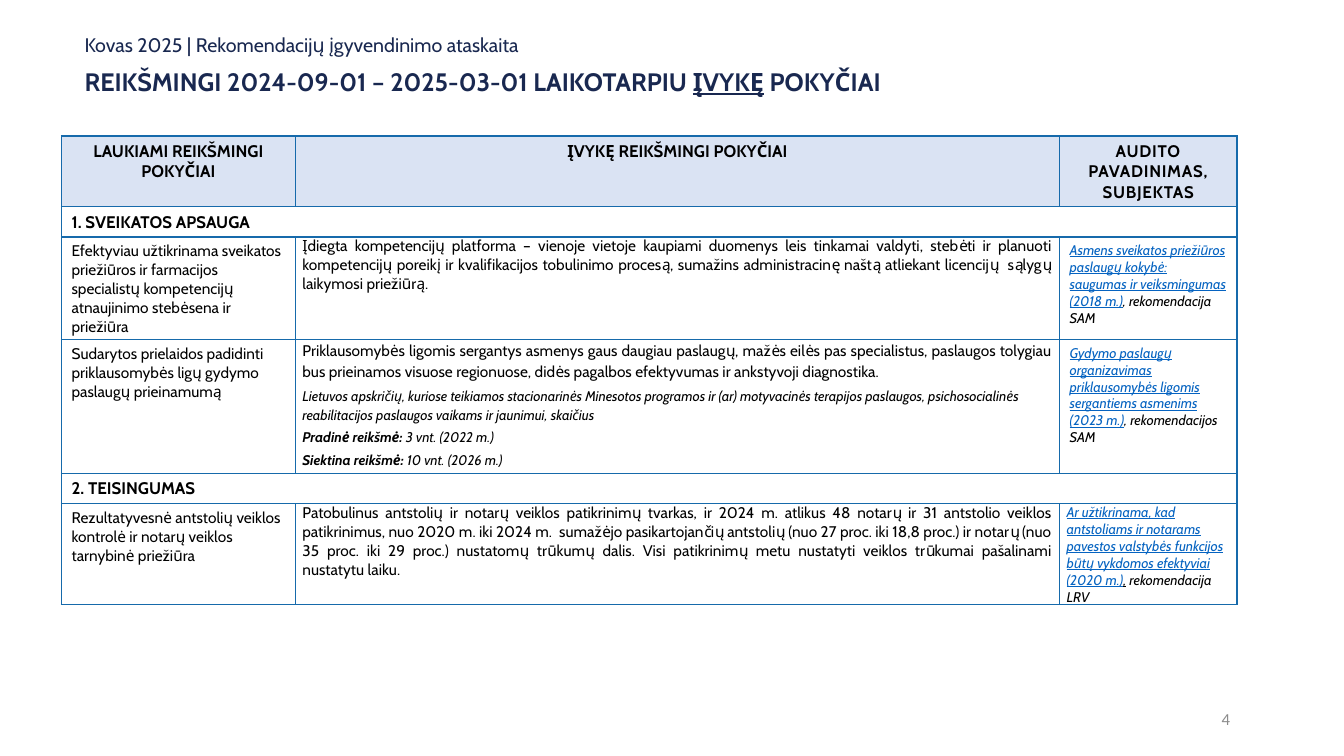
from dataclasses import dataclass
from typing import Optional

import lxml.etree
import pptx
import pptx.dml.color
import pptx.enum.text
import pptx.oxml.ns
import pptx.util

Inches = pptx.util.Inches
Pt = pptx.util.Pt
RGBColor = pptx.dml.color.RGBColor
ALIGN = pptx.enum.text.PP_ALIGN
ANCHOR = pptx.enum.text.MSO_ANCHOR

NAVY = RGBColor(0x19, 0x28, 0x50)
BLACK = RGBColor(0x00, 0x00, 0x00)
LINK_BLUE = RGBColor(0x05, 0x63, 0xC1)
HEADER_FILL = RGBColor(0xDA, 0xE3, 0xF3)
WHITE = RGBColor(0xFF, 0xFF, 0xFF)
BORDER_BLUE = RGBColor(0x16, 0x6A, 0xAB)
PAGE_GREY = RGBColor(0x8C, 0x8C, 0x8C)


@dataclass
class Span:
    text: str
    color: Optional[RGBColor] = None
    bold: Optional[bool] = None
    underline: Optional[bool] = None
    tracking: float = 0


@dataclass
class Para:
    spans: list[Span]
    size: float
    color: RGBColor = BLACK
    bold: bool = False
    italic: bool = False
    align: ALIGN = ALIGN.LEFT
    line: float = 1.0
    before: float = 0
    after: float = 0
    font: str = "Cabin"


@dataclass
class Cell:
    paras: list[Para]
    fill: RGBColor = WHITE
    tight: bool = False
    columns: int = 1


def write(frame: pptx.text.text.TextFrame, paras: list[Para]) -> None:
    frame.word_wrap = True
    for index, para in enumerate(paras):
        paragraph = frame.add_paragraph() if index else frame.paragraphs[0]
        paragraph.alignment = para.align
        paragraph.line_spacing = para.line
        paragraph.space_before = Pt(para.before if index else 0)
        paragraph.space_after = Pt(para.after)
        font = paragraph.font
        font.name, font.size = para.font, Pt(para.size)
        font.bold, font.italic = para.bold, para.italic
        font.color.rgb = para.color
        for span in para.spans:
            run = paragraph.add_run()
            run.text = span.text
            if span.color is not None:
                run.font.color.rgb = span.color
            if span.bold is not None:
                run.font.bold = span.bold
            if span.underline is not None:
                run.font.underline = span.underline
            if span.tracking:
                run._r.get_or_add_rPr().set("spc", str(int(span.tracking * 100)))


def add_text(slide: pptx.slide.Slide, left: float, top: float, width: float,
             height: float, para: Para, anchor: ANCHOR = ANCHOR.TOP) -> None:
    box = slide.shapes.add_textbox(Inches(left), Inches(top), Inches(width), Inches(height))
    box.text_frame.vertical_anchor = anchor
    write(box.text_frame, [para])


def set_borders(cell: pptx.table._Cell) -> None:
    properties = cell._tc.get_or_add_tcPr()
    qn = pptx.oxml.ns.qn
    for index, side in enumerate(("a:lnL", "a:lnR", "a:lnT", "a:lnB")):
        line = lxml.etree.Element(qn(side), w=str(Pt(1)))
        fill = lxml.etree.SubElement(line, qn("a:solidFill"))
        lxml.etree.SubElement(fill, qn("a:srgbClr"), val=str(BORDER_BLUE))
        properties.insert(index, line)


def header(text: str, tracking: float = 0) -> Cell:
    return Cell([Para([Span(text, tracking=tracking)], 12, bold=True, align=ALIGN.CENTER)],
                fill=HEADER_FILL)


def section(text: str) -> list[Cell]:
    return [Cell([Para([Span(text)], 12, bold=True)], columns=3)]


def expected(text: str) -> Cell:
    return Cell([Para([Span(text)], 11)])


def achieved(text: str, details: Optional[list[Para]] = None) -> Cell:
    main = Para([Span(text)], 11, align=ALIGN.JUSTIFY)
    if details:
        main.line, main.after = 1.1, 2
    return Cell([main] + (details or []), tight=True)


def detail(spans: list[Span], line: float = 1.0) -> Para:
    return Para(spans, 10, italic=True, line=line, before=2, after=2)


def audit(title: str, *rest: Span, tight: bool = False) -> Cell:
    link = Span(title, color=LINK_BLUE, underline=True)
    return Cell([Para([link, *rest], 10, italic=True)], tight=tight)


COLUMN_WIDTHS = [2.32, 7.58, 1.76]
ROW_HEIGHTS = [0.5, 0.21, 0.95, 1.33, 0.27, 0.89]
ROWS = [
    [header("LAUKIAMI REIKŠMINGI POKYČIAI"),
     header("ĮVYKĘ REIKŠMINGI POKYČIAI"),
     header("AUDITO PAVADINIMAS, SUBJEKTAS", tracking=0.5)],
    section("1. SVEIKATOS APSAUGA"),
    [expected("Efektyviau užtikrinama sveikatos priežiūros ir farmacijos specialistų "
              "kompetencijų atnaujinimo stebėsena ir priežiūra"),
     achieved("Įdiegta kompetencijų platforma – vienoje vietoje kaupiami duomenys leis "
              "tinkamai valdyti, stebėti ir planuoti kompetencijų poreikį ir kvalifikacijos "
              "tobulinimo procesą, sumažins administracinę naštą atliekant licencijų  sąlygų "
              "laikymosi priežiūrą."),
     audit("Asmens sveikatos priežiūros paslaugų kokybė: saugumas ir veiksmingumas (2018 m.)",
           Span(", rekomendacija SAM"))],
    [expected("Sudarytos prielaidos padidinti priklausomybės ligų gydymo paslaugų "
              "prieinamumą"),
     achieved("Priklausomybės ligomis sergantys asmenys gaus daugiau paslaugų, mažės eilės "
              "pas specialistus, paslaugos tolygiau bus prieinamos visuose regionuose, didės "
              "pagalbos efektyvumas ir ankstyvoji diagnostika.",
              [detail([Span("Lietuvos apskričių, kuriose teikiamos stacionarinės Minesotos "
                            "programos ir (ar) motyvacinės terapijos paslaugos, "
                            "psichosocialinės reabilitacijos paslaugos vaikams ir jaunimui, "
                            "skaičius")], line=1.1),
               detail([Span("Pradinė reikšmė: ", bold=True), Span("3 vnt. (2022 m.)")]),
               detail([Span("Siektina reikšmė: ", bold=True), Span("10 vnt. (2026 m.)")])]),
     audit("Gydymo paslaugų organizavimas priklausomybės ligomis sergantiems asmenims "
           "(2023 m.)", Span(", rekomendacijos SAM"))],
    section("2. TEISINGUMAS"),
    [expected("Rezultatyvesnė antstolių veiklos kontrolė ir notarų veiklos tarnybinė "
              "priežiūra"),
     achieved("Patobulinus antstolių ir notarų veiklos patikrinimų tvarkas, ir 2024 m. "
              "atlikus 48 notarų ir 31 antstolio veiklos patikrinimus, nuo 2020 m. iki "
              "2024 m.  sumažėjo pasikartojančių antstolių (nuo 27 proc. iki 18,8 proc.) ir "
              "notarų (nuo 35 proc. iki 29 proc.) nustatomų trūkumų dalis. Visi patikrinimų "
              "metu nustatyti veiklos trūkumai pašalinami nustatytu laiku."),
     audit("Ar užtikrinama, kad antstoliams ir notarams pavestos valstybės funkcijos būtų "
           "vykdomos efektyviai (2020 m.)", Span(",", underline=True),
           Span(" rekomendacija LRV"), tight=True)],
]


def add_changes_table(slide: pptx.slide.Slide) -> None:
    frame = slide.shapes.add_table(len(ROWS), len(COLUMN_WIDTHS), Inches(0.61), Inches(1.35),
                                   Inches(sum(COLUMN_WIDTHS)), Inches(4.65))
    table = frame.table
    table.first_row = table.horz_banding = False
    for column, width in zip(table.columns, COLUMN_WIDTHS):
        column.width = Inches(width)
    for row, height in zip(table.rows, ROW_HEIGHTS):
        row.height = Inches(height)
    for r, contents in enumerate(ROWS):
        for c, content in enumerate(contents):
            cell = table.cell(r, c)
            if content.columns > 1:
                cell.merge(table.cell(r, c + content.columns - 1))
            if content.tight:
                cell.margin_left = cell.margin_right = Inches(0.07)
                cell.margin_top = cell.margin_bottom = 0
            write(cell.text_frame, content.paras)
        for c in range(len(COLUMN_WIDTHS)):
            cell = table.cell(r, c)
            cell.fill.solid()
            cell.fill.fore_color.rgb = contents[min(c, len(contents) - 1)].fill
            set_borders(cell)


def main() -> None:
    deck = pptx.Presentation()
    deck.slide_width, deck.slide_height = Inches(13.33), Inches(7.5)
    slide = deck.slides.add_slide(deck.slide_layouts[6])

    # Report name and heading
    add_text(slide, 0.74, 0.3, 11.5, 0.49,
             Para([Span("Kovas 2025 | Rekomendacijų įgyvendinimo ataskaita")], 14, NAVY, line=0.9))
    add_text(slide, 0.74, 0.61, 11.25, 0.4,
             Para([Span("REIKŠMINGI 2024-09-01 – 2025-03-01 LAIKOTARPIU "),
                   Span("ĮVYKĘ", underline=True), Span(" POKYČIAI")], 18, NAVY, bold=True))

    # Changes by area
    add_changes_table(slide)

    # Page number
    add_text(slide, 9.43, 6.93, 2.87, 0.4,
             Para([Span("4")], 12, PAGE_GREY, align=ALIGN.RIGHT, font="Calibri"), ANCHOR.MIDDLE)
    deck.save("out.pptx")


if __name__ == "__main__":
    main()
